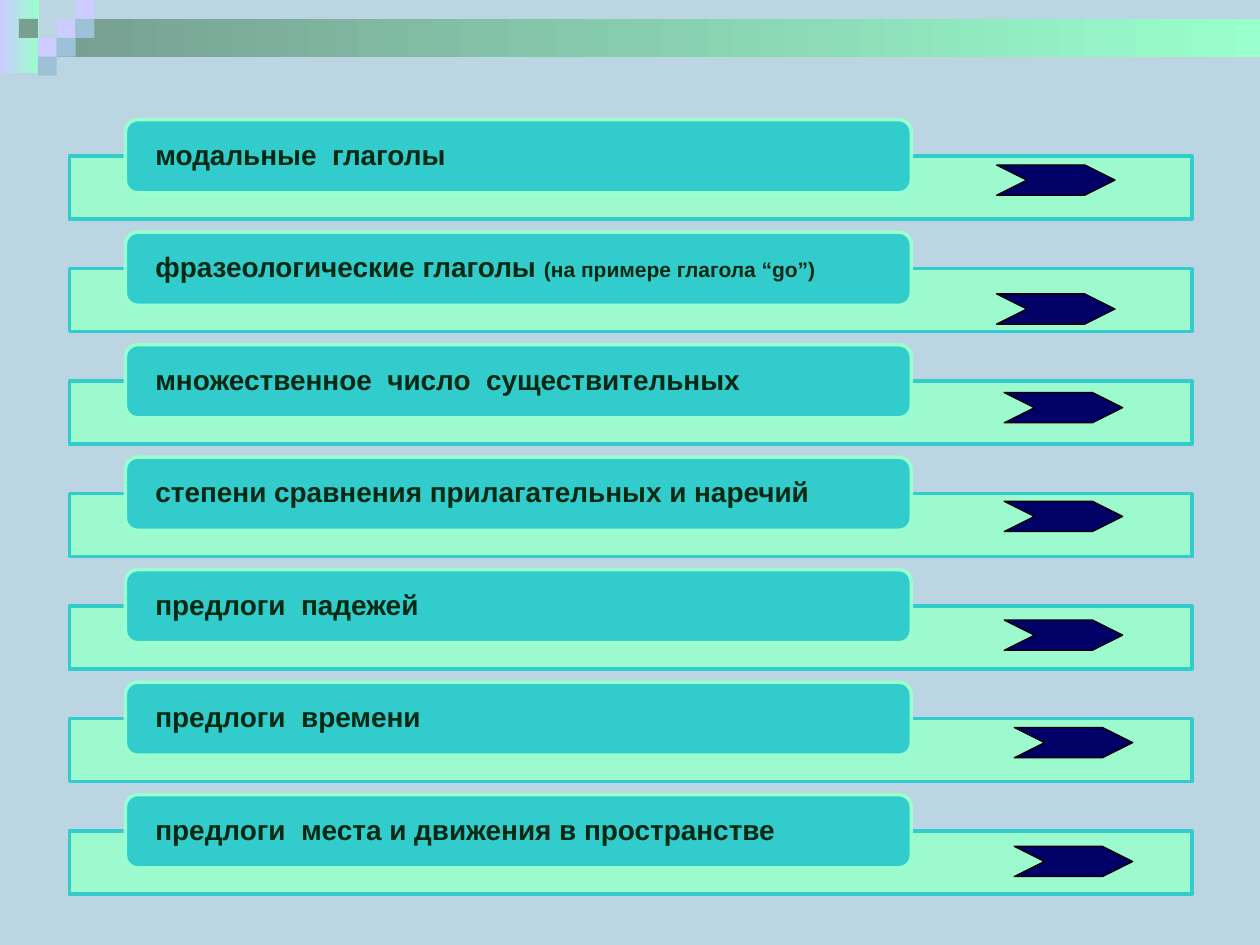
from dataclasses import dataclass

from lxml import etree
from pptx import Presentation
from pptx import util as u
from pptx.dml.color import RGBColor
from pptx.enum import shapes, text
from pptx.oxml.ns import qn


@dataclass(frozen=True)
class Theme:
    background: str = "BBD5E3"
    mint: str = "99FFCC"
    teal: str = "33CCCC"
    lilac: str = "CCCCFF"
    sage: str = "779F92"
    steel: str = "9DC2D7"
    navy: str = "000066"
    black: str = "000000"
    ink: str = "002914"
    font: str = "Arial"
    topic_size: int = 16
    note_size: int = 12


THEME = Theme()
KIND = shapes.MSO_SHAPE
WIDTH, HEIGHT = 10, 7.5
CELL = 0.15  # side of one square of the corner mosaic

# Column and row of each mosaic square
MOSAIC = [
    (3, 1, THEME.lilac), (4, 0, THEME.lilac), (4, 1, THEME.steel),
    (2, 2, THEME.lilac), (1, 1, THEME.sage), (3, 2, THEME.steel),
    (2, 3, THEME.steel),
]

# Topic, note, and the arrow's left and top within its row
TOPICS = [
    ("модальные  глаголы", "", 7.36, 0.36),
    ("фразеологические глаголы ", "(на примере глагола “go”)", 7.36, 0.49),
    ("множественное  число  существительных", "", 7.42, 0.38),
    ("степени сравнения прилагательных и наречий", "", 7.42, 0.35),
    ("предлоги  падежей", "", 7.42, 0.4),
    ("предлоги  времени", "", 7.5, 0.36),
    ("предлоги  места и движения в пространстве", "", 7.5, 0.41),
]


def color(value):
    return RGBColor.from_string(value)


def add_block(slide, kind, box, fill, line=None, line_width=2):
    """Add a preset shape; a pair of colours makes a left-to-right gradient."""
    shape = slide.shapes.add_shape(kind, *map(u.Inches, box))
    shape.shadow.inherit = False
    if isinstance(fill, tuple):
        shape.fill.gradient()
        shape.fill.gradient_angle = 0
        for stop, value, position in zip(shape.fill.gradient_stops, fill, (0, 1)):
            stop.color.rgb = color(value)
            stop.position = position
    else:
        shape.fill.solid()
        shape.fill.fore_color.rgb = color(fill)
    if line:
        shape.line.color.rgb = color(line)
        shape.line.width = u.Pt(line_width)
    else:
        shape.line.fill.background()
    return shape


def set_opacity(shape, percent):
    solid = shape.fill._xPr.find(qn("a:solidFill"))
    etree.SubElement(solid[0], qn("a:alpha"), val=str(percent * 1000))


def add_header(slide, left, top, width):
    add_block(slide, KIND.RECTANGLE, (left, top, 0.31, 0.58),
              (THEME.lilac, THEME.mint))
    add_block(slide, KIND.RECTANGLE,
              (left + 3 * CELL, top + CELL, width - 3 * CELL, 2 * CELL),
              (THEME.sage, THEME.mint))
    for column, row, fill in MOSAIC:
        add_block(slide, KIND.RECTANGLE,
                  (left + column * CELL, top + row * CELL, CELL, CELL), fill)


def write_topic(shape, topic, note):
    frame = shape.text_frame
    frame.word_wrap = True
    frame.vertical_anchor = text.MSO_ANCHOR.MIDDLE
    frame.margin_left = frame.margin_right = u.Inches(0.21)
    frame.margin_top = frame.margin_bottom = 0
    paragraph = frame.paragraphs[0]
    paragraph.alignment = text.PP_ALIGN.LEFT
    paragraph.line_spacing = 0.9
    for words, size in ((topic, THEME.topic_size), (note, THEME.note_size)):
        if words:
            run = paragraph.add_run()
            run.text = words
            run.font.name = THEME.font
            run.font.size = u.Pt(size)
            run.font.bold = True
            run.font.color.rgb = color(THEME.ink)


def add_topic_row(slide, left, top, width, topic, note, arrow_left, arrow_top):
    bar = add_block(slide, KIND.RECTANGLE, (left, top + 0.29, width, 0.5),
                    THEME.mint, THEME.teal)
    set_opacity(bar, 90)
    label = add_block(slide, KIND.ROUNDED_RECTANGLE,
                      (left + 0.05 * width, top, 0.7 * width, 0.58),
                      THEME.teal, THEME.mint)
    write_topic(label, topic, note)
    arrow = add_block(slide, KIND.CHEVRON,
                      (left + arrow_left, top + arrow_top, 0.94, 0.24),
                      THEME.navy, THEME.black, 0.75)
    arrow.adjustments[0] = 1


def add_topic_list(slide, left, top, width, height):
    pitch = height / len(TOPICS)
    for index, topic in enumerate(TOPICS):
        add_topic_row(slide, left, top + index * pitch, width, *topic)


def main():
    presentation = Presentation()
    presentation.slide_width = u.Inches(WIDTH)
    presentation.slide_height = u.Inches(HEIGHT)
    slide = presentation.slides.add_slide(presentation.slide_layouts[6])
    slide.background.fill.solid()
    slide.background.fill.fore_color.rgb = color(THEME.background)
    add_header(slide, 0, 0, WIDTH)
    add_topic_list(slide, 0.55, 0.95, 8.91, 6.25)
    presentation.save("out.pptx")


if __name__ == "__main__":
    main()
